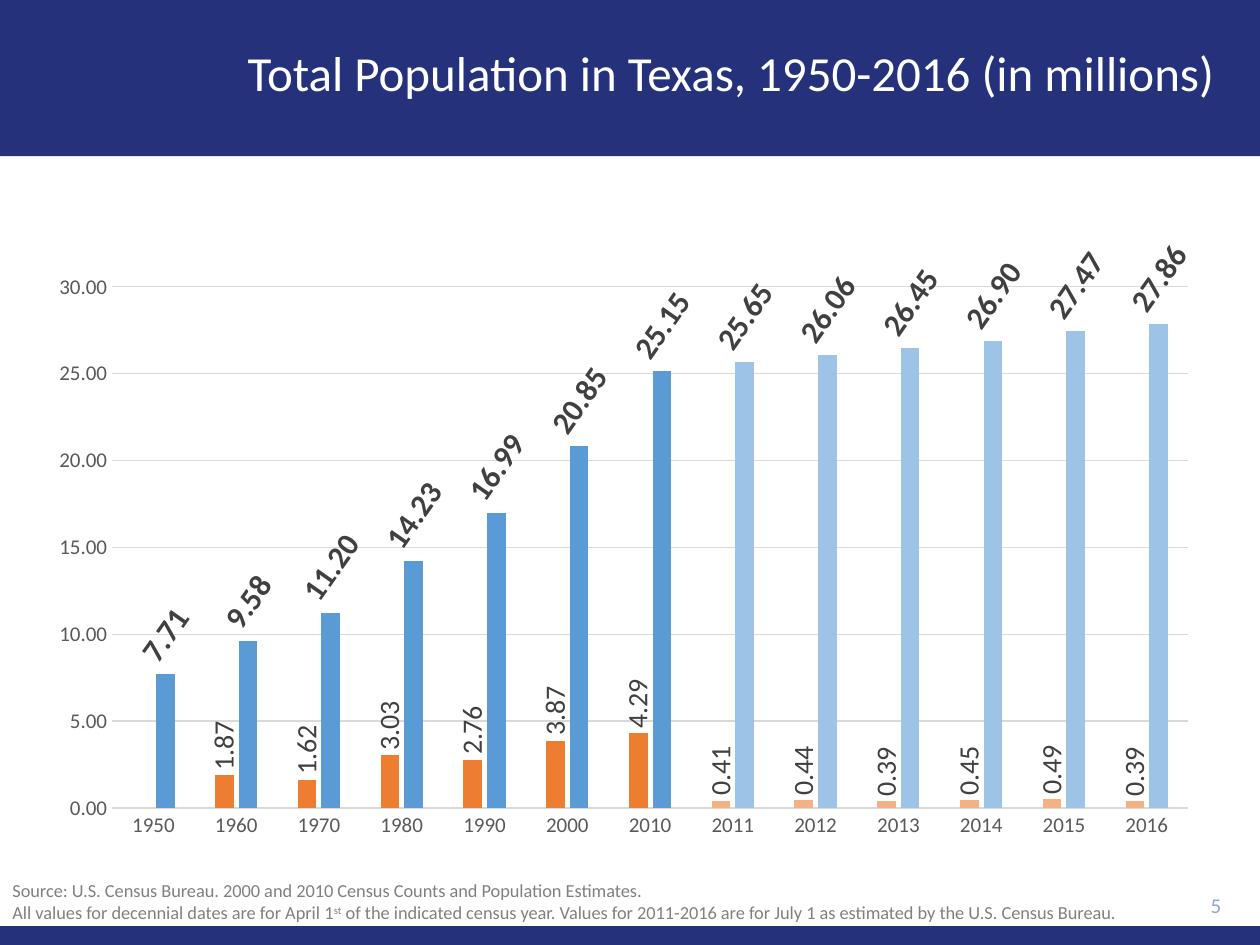
from lxml.etree import SubElement
from pptx import Presentation
from pptx.chart.data import CategoryChartData
from pptx.dml.color import RGBColor
from pptx.enum.chart import XL_CHART_TYPE, XL_LABEL_POSITION, XL_TICK_MARK
from pptx.enum.shapes import MSO_SHAPE
from pptx.enum.text import MSO_ANCHOR, PP_ALIGN
from pptx.oxml.ns import qn
from pptx.util import Inches, Pt

NAVY = RGBColor(0x25, 0x32, 0x7B)
WHITE = RGBColor(0xFF, 0xFF, 0xFF)
PALE_BLUE = RGBColor(0x8F, 0xA5, 0xD1)
SOURCE_GRAY = RGBColor(0x80, 0x80, 0x80)
AXIS_GRAY = RGBColor(0x59, 0x59, 0x59)
LABEL_GRAY = RGBColor(0x40, 0x40, 0x40)
GRID_GRAY = RGBColor(0xD9, 0xD9, 0xD9)
ORANGE = RGBColor(0xED, 0x7D, 0x31)
LIGHT_ORANGE = RGBColor(0xF4, 0xB1, 0x83)
BLUE = RGBColor(0x5B, 0x9B, 0xD5)
LIGHT_BLUE = RGBColor(0x9D, 0xC3, 0xE6)

# Grid of 100 columns by 75 rows
COLUMNS, ROWS = 100, 75
deck = Presentation()
deck.slide_width, deck.slide_height = Inches(10), Inches(7.5)
page = deck.slides.add_slide(deck.slide_layouts[6])


def place(left, top, width, height):
    column, row = deck.slide_width / COLUMNS, deck.slide_height / ROWS
    return [round(n) for n in (left * column, top * row, width * column, height * row)]


def style_font(font, size, color, bold=False):
    values = {"name": "Calibri", "size": Pt(size), "bold": bold}
    for name, value in values.items():
        setattr(font, name, value)
    font.color.rgb = color


# Bands at the top and bottom
for top, height in ((0, 12.4), (73.5, 1.5)):
    band = page.shapes.add_shape(MSO_SHAPE.RECTANGLE, *place(0, top, COLUMNS, height))
    band.shadow.inherit = False
    band.fill.solid()
    band.fill.fore_color.rgb = NAVY
    band.line.fill.background()

# Population chart
CHART_WIDTH, CHART_HEIGHT = 92.5, 51
FIRST_ESTIMATE = 7
growth = (None, 1.87, 1.62, 3.03, 2.76, 3.87, 4.29, 0.41, 0.44, 0.39, 0.45, 0.49, 0.39)
population = (7.71, 9.58, 11.20, 14.23, 16.99, 20.85, 25.15,
              25.65, 26.06, 26.45, 26.90, 27.47, 27.86)
data = CategoryChartData(number_format="0.00")
data.categories = [str(year) for year in (*range(1950, 2010, 10), *range(2010, 2017))]
data.add_series("Series 1", growth)
data.add_series("Series 2", population)
chart = page.shapes.add_chart(XL_CHART_TYPE.COLUMN_CLUSTERED,
                              *place(4.1, 16.5, CHART_WIDTH, CHART_HEIGHT), data).chart
chart.has_title = chart.has_legend = False
chart.font.name, chart.font.size = "Calibri", Pt(10)
plot = chart.plots[0]
for name, value in {"gap_width": 219, "overlap": -27, "vary_by_categories": False}.items():
    setattr(plot, name, value)

# Axes
for axis in (chart.category_axis, chart.value_axis):
    axis.major_tick_mark = axis.minor_tick_mark = XL_TICK_MARK.NONE
    style_font(axis.tick_labels.font, 12, AXIS_GRAY)
scale = chart.value_axis
scale.minimum_scale, scale.maximum_scale, scale.major_unit = 0, 30, 5
scale.has_major_gridlines = True
scale.tick_labels.number_format = "0.00"
scale.tick_labels.number_format_is_linked = False
scale.format.line.fill.background()
for line in (chart.category_axis.format.line, scale.major_gridlines.format.line):
    line.color.rgb = GRID_GRAY
    line.width = Pt(0.75)

# Series: census color, estimate color, label size, bold, label angle
series_styles = ((ORANGE, LIGHT_ORANGE, 16, False, -90), (BLUE, LIGHT_BLUE, 18, True, -55))
for series, (census, estimate, size, bold, angle) in zip(plot.series, series_styles):
    series.invert_if_negative = False
    series.format.fill.solid()
    series.format.fill.fore_color.rgb = census
    for index in range(FIRST_ESTIMATE, len(population)):
        fill = series.points[index].format.fill
        fill.solid()
        fill.fore_color.rgb = estimate
    labels = series.data_labels
    formats = {"show_value": True, "position": XL_LABEL_POSITION.OUTSIDE_END,
               "number_format": "0.00", "number_format_is_linked": False}
    for name, value in formats.items():
        setattr(labels, name, value)
    style_font(labels.font, size, LABEL_GRAY, bold)
    body = labels._element.find(qn("c:txPr")).find(qn("a:bodyPr"))
    body.set("rot", str(angle * 60000))
    body.set("vert", "horz")

# Inner plot area, as shares of the chart
area = chart._chartSpace.chart.plotArea
for old in area.findall(qn("c:layout")):
    area.remove(old)
layout = SubElement(area, qn("c:layout"))
area.insert(0, layout)
manual = SubElement(layout, qn("c:manualLayout"))
settings = {"layoutTarget": "inner", "xMode": "edge", "yMode": "edge",
            "x": 4.8 / CHART_WIDTH, "y": 6.27 / CHART_HEIGHT,
            "w": 85.4 / CHART_WIDTH, "h": 41.36 / CHART_HEIGHT}
for name, value in settings.items():
    SubElement(manual, qn(f"c:{name}")).set("val", str(value))

# Title, page number and source note; each paragraph is a list of runs
source = [
    ["Source: U.S. Census Bureau. 2000 and 2010 Census Counts and Population Estimates."],
    ["All values for decennial dates are for April 1", "st",
     " of the indicated census year. Values for 2011-2016 are for July 1"
     " as estimated by the U.S. Census Bureau."],
]
texts = (
    ((17, 1, 82, 10), [["Total Population in Texas, 1950-2016 (in millions)"]],
     28, WHITE, PP_ALIGN.CENTER, MSO_ANCHOR.MIDDLE, 0.9),
    ((89, 70.1, 8.9, 3.4), [["5"]], 12, PALE_BLUE, PP_ALIGN.RIGHT, MSO_ANCHOR.MIDDLE, 1),
    ((0, 69.3, 95.5, 6.3 - 0.6), source, 10.5, SOURCE_GRAY, PP_ALIGN.LEFT, MSO_ANCHOR.TOP, 1),
)
for cell, paragraphs, size, color, align, anchor, spacing in texts:
    box = page.shapes.add_textbox(*place(*cell))
    frame = box.text_frame
    frame.word_wrap = True
    frame.vertical_anchor = anchor
    for number, runs in enumerate(paragraphs):
        para = frame.add_paragraph() if number else frame.paragraphs[0]
        para.alignment, para.line_spacing = align, spacing
        for words in runs:
            span = para.add_run()
            span.text = words
            style_font(span.font, size, color)
            if words == "st":
                span._r.get_or_add_rPr().set("baseline", "30000")

deck.save("out.pptx")
